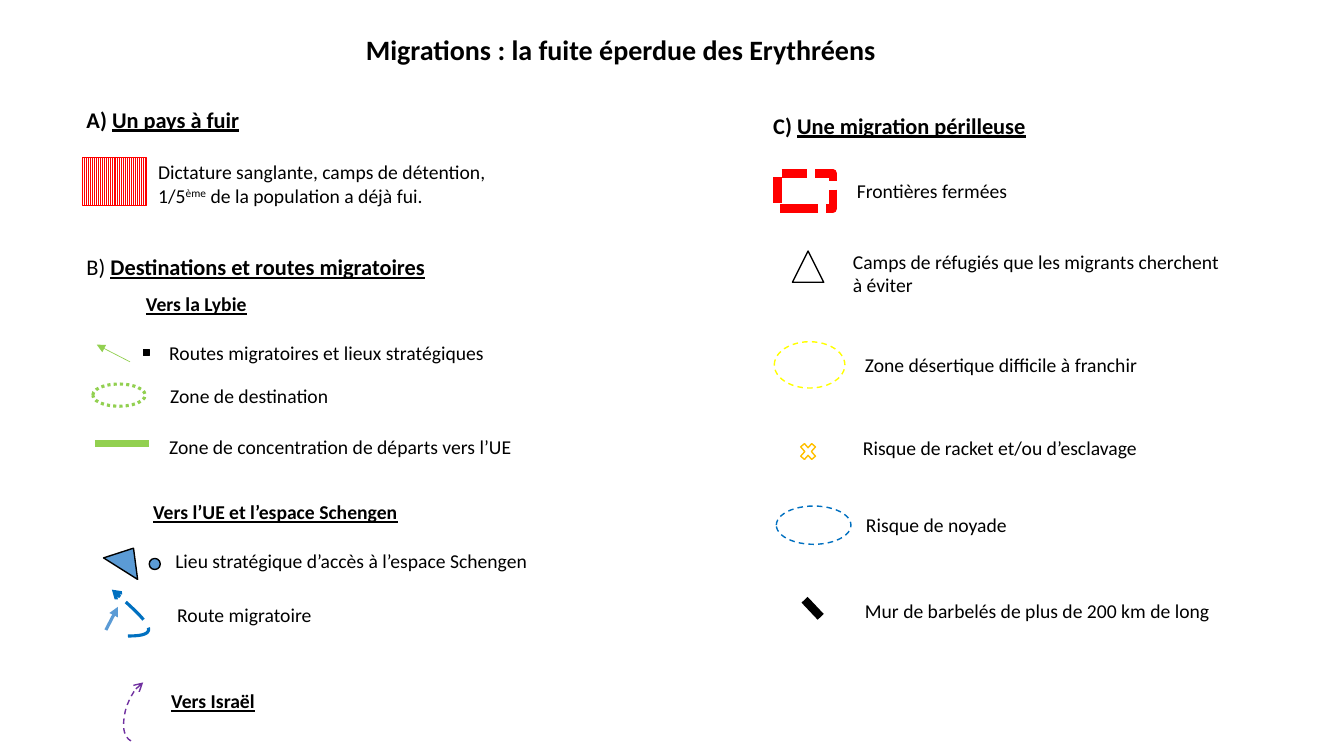
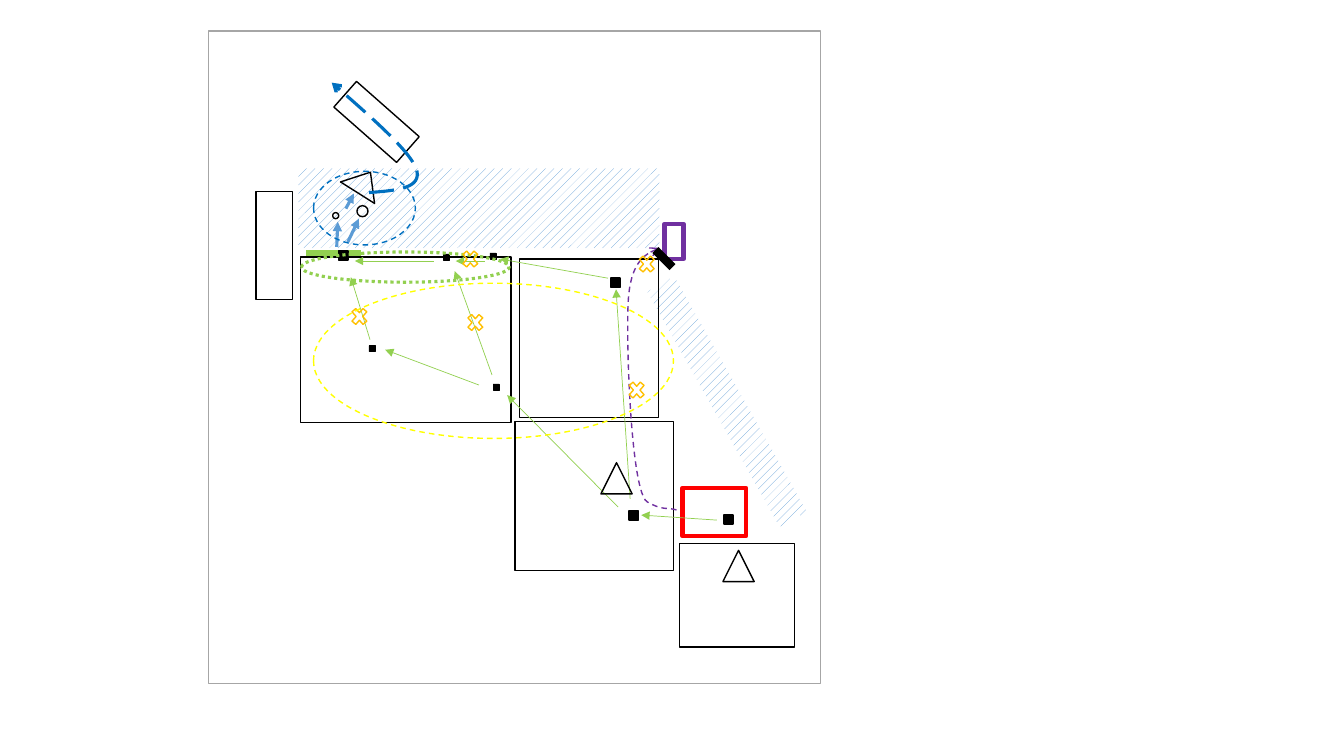
import pptx
import pptx.util
import pptx.dml.color
import pptx.enum.dml
import pptx.enum.shapes
import pptx.oxml.ns
from lxml import etree

RGB = pptx.dml.color.RGBColor
DASH = pptx.enum.dml.MSO_LINE
HATCH = pptx.enum.dml.MSO_PATTERN
FORM = pptx.enum.shapes.MSO_SHAPE
STRAIGHT = pptx.enum.shapes.MSO_CONNECTOR.STRAIGHT
qn = pptx.oxml.ns.qn

BLACK = RGB(0x00, 0x00, 0x00)
WHITE = RGB(0xFF, 0xFF, 0xFF)
GREY = RGB(0xA6, 0xA6, 0xA6)
RED = RGB(0xFF, 0x00, 0x00)
GREEN = RGB(0x92, 0xD0, 0x50)
SKY = RGB(0x5B, 0x9B, 0xD5)
BLUE = RGB(0x00, 0x70, 0xC0)
PURPLE = RGB(0x70, 0x30, 0xA0)
YELLOW = RGB(0xFF, 0xFF, 0x00)
ORANGE = RGB(0xFF, 0xC0, 0x00)

FONT = "Calibri"
PX = 9144
WIDTH, HEIGHT = 1333, 750
STEPS = 24

# form, fill, line colour, line width, dash, usual size
MARKS = {
    "sea": (FORM.RECTANGLE, (HATCH.PERCENT_20, SKY), None, 0, None, ()),
    "regime": (FORM.RECTANGLE, (HATCH.LIGHT_VERTICAL, RED), RED, 0.5, None, (63, 48)),
    "origin": (FORM.RECTANGLE, None, RED, 3, None, (63, 48)),
    "closed": (FORM.RECTANGLE, None, RED, 6, DASH.SQUARE_DOT, ()),
    "country": (FORM.RECTANGLE, None, BLACK, 1, None, ()),
    "israel": (FORM.RECTANGLE, None, PURPLE, 3, None, ()),
    "town": (FORM.RECTANGLE, BLACK, BLACK, 0.5, None, (6, 6)),
    "city": (FORM.RECTANGLE, BLACK, BLACK, 1, None, (9, 9)),
    "target": (FORM.OVAL, None, GREEN, 2.25, DASH.ROUND_DOT, ()),
    "gate": (FORM.ISOSCELES_TRIANGLE, SKY, BLACK, 1, None, ()),
    "port": (FORM.OVAL, SKY, BLACK, 1, None, (11, 11)),
    "island": (FORM.ISOSCELES_TRIANGLE, None, BLACK, 1, None, ()),
    "isle": (FORM.OVAL, None, BLACK, 1, None, (11, 11)),
    "camp": (FORM.ISOSCELES_TRIANGLE, None, BLACK, 1, None, (31, 31)),
    "desert": (FORM.OVAL, None, YELLOW, 1, DASH.DASH, ()),
    "racket": (FORM.MATH_MULTIPLY, None, ORANGE, 1, None, (21, 24)),
    "drown": (FORM.OVAL, None, BLUE, 1, DASH.DASH, ()),
    "frame": (FORM.RECTANGLE, None, GREY, 1, None, ()),
}

LINES = {
    "coast": (GREEN, 4.5, None, None),
    "route": (GREEN, 0.5, None, "triangle"),
    "crossing": (SKY, 2.25, None, "triangle"),
    "europe": (BLUE, 2.25, DASH.LONG_DASH, "arrow"),
    "east": (PURPLE, 1, DASH.DASH, "arrow"),
    "wall": (BLACK, 6, None, None),
}

TEXTS = [
    (353, 27, 560, 20, [[("Migrations : la fuite éperdue des Erythréens", "b")]]),
    (76, 100, 440, 16, [[("A) ", "b"), ("Un pays à fuir", "bu")]]),
    (147, 154, 440, 14, [[("Dictature sanglante, camps de détention,", "")],
                         [("1/5", ""), ("ème", "s"), (" de la population a déjà fui.", "")]]),
    (76, 246, 440, 16, [[("B) ", ""), ("Destinations et routes migratoires", "bu")]]),
    (135, 285, 440, 14, [[("Vers la Lybie", "bu")]]),
    (158, 333, 440, 14, [[("Routes migratoires et lieux stratégiques", "")]]),
    (159, 376, 440, 14, [[("Zone de destination", "")]]),
    (158, 427, 440, 14, [[("Zone de concentration de départs vers l’UE", "")]]),
    (142, 491, 440, 14, [[("Vers l’UE et l’espace Schengen", "bu")]]),
    (164, 540, 440, 14, [[("Lieu stratégique d’accès à l’espace Schengen", "")]]),
    (166, 593, 440, 14, [[("Route migratoire", "")]]),
    (160, 679, 440, 14, [[("Vers Israël", "bu")]]),
    (757, 106, 385, 16, [[("C) ", "b"), ("Une migration périlleuse", "bu")]]),
    (840, 173, 385, 14, [[("Frontières fermées", "")]]),
    (836, 243, 385, 14, [[("Camps de réfugiés que les migrants cherchent à éviter", "")]]),
    (848, 345, 385, 14, [[("Zone désertique difficile à franchir", "")]]),
    (846, 428, 385, 14, [[("Risque de racket et/ou d’esclavage", "")]]),
    (849, 504, 385, 14, [[("Risque de noyade", "")]]),
    (848, 589, 385, 14, [[("Mur de barbelés de plus de 200 km de long", "")]]),
]

LEGEND = {
    "regime": [(82, 156)],
    "route": [[(129, 359), (96, 342)]],
    "town": [(142, 347)],
    "coast": [[(94, 440), (148, 440)]],
    "target": [(92, 381, 52, 22)],
    "gate": [(106, 542, 40, 24, 32.2)],
    "port": [(148, 554)],
    "crossing": [[(105, 625), (117, 602)]],
    "europe": [[(127, 631), (138, 631), (150, 630), (147, 622),
                (144, 614), (128, 600), (111, 585)]],
    "east": [[(130, 735), (121, 730), (122, 717), (124, 707),
              (126, 697), (134, 681), (142, 677)]],
    "closed": [(771, 172, 55, 35)],
    "camp": [(786, 249)],
    "racket": [(791, 436)],
    "drown": [(770, 502, 74, 38)],
    "desert": [(768, 339, 70, 46)],
    "wall": [[(798, 595), (814, 612)]],
}

CHART = {
    "sea": [(296, 167, 358, 79), (587, 383, 268, 31, 60.6)],
    "origin": [(677, 484)],
    "coast": [[(304, 251), (358, 251)]],
    "country": [(511, 418, 157, 148), (254, 190, 36, 107), (298, 255, 209, 164),
                (332, 104, 83, 34, 41.4), (515, 257, 138, 157), (674, 539, 114, 103)],
    "isle": [(354, 204), (330, 211, 6, 6)],
    "city": [(336, 249), (606, 276), (718, 511), (624, 507)],
    "town": [(486, 251), (440, 252), (366, 343), (489, 381)],
    "route": [[(711, 516), (636, 511)], [(367, 337), (348, 275)],
              [(625, 495), (611, 287)], [(481, 259), (452, 259)],
              [(430, 259), (352, 259)], [(613, 503), (503, 392)],
              [(475, 382), (382, 347)], [(603, 276), (496, 257)],
              [(488, 372), (451, 269)]],
    "east": [[(671, 506), (661, 503), (658, 507), (642, 498), (626, 489),
              (621, 343), (623, 301), (625, 259), (640, 252), (654, 246)]],
    "crossing": [[(334, 245), (335, 220)], [(345, 240), (356, 217)],
                 [(343, 207), (351, 192)]],
    "target": [(299, 250, 206, 30)],
    "island": [(341, 169, 40, 24, 32.2)],
    "israel": [(659, 222, 19, 35)],
    "europe": [[(366, 191), (393, 189), (419, 187), (413, 168),
                (407, 150), (368, 116), (329, 82)]],
    "drown": [(311, 170, 101, 73)],
    "racket": [(631, 250), (346, 302), (461, 308), (456, 245), (621, 375)],
    "camp": [(717, 546), (596, 459)],
    "desert": [(311, 281, 357, 154)],
    "wall": [[(650, 248), (667, 265)]],
    "frame": [(207, 31, 607, 647)],
}


def emu(*vals):
    return [round(v * PX) for v in vals]


def stroke(line, color, width, dash):
    if color is None:
        line.fill.background()
        return
    line.color.rgb = color
    line.width = pptx.util.Pt(width)
    if dash is not None:
        line.dash_style = dash


def paint(fill, look):
    if look is None:
        fill.background()
    elif isinstance(look, RGB):
        fill.solid()
        fill.fore_color.rgb = look
    else:
        fill.patterned()
        fill.pattern, fill.fore_color.rgb = look
        fill.back_color.rgb = WHITE


def mark(slide, kind, spot):
    form, look, color, width, dash, size = MARKS[kind]
    box = spot[:4] if len(spot) > 2 else spot + size
    shape = slide.shapes.add_shape(form, *emu(*box))
    shape.shadow.inherit = False
    shape.rotation = spot[4] if len(spot) > 4 else 0
    paint(shape.fill, look)
    stroke(shape.line, color, width, dash)


def bend(pts):
    out = []
    for i in range(0, len(pts) - 1, 3):
        for n in range(1, STEPS + 1):
            t = n / STEPS
            u = 1 - t
            parts = (u ** 3, 3 * u * u * t, 3 * u * t * t, t ** 3)
            out.append(emu(*(sum(k * p[axis] for k, p in zip(parts, pts[i:i + 4]))
                             for axis in (0, 1))))
    return out


def trace(slide, kind, pts):
    color, width, dash, head = LINES[kind]
    if len(pts) == 2:
        item = slide.shapes.add_connector(STRAIGHT, *emu(*pts[0], *pts[1]))
        etree.SubElement(item._element.spPr, qn("a:effectLst"))
    else:
        pen = slide.shapes.build_freeform(*emu(*pts[0]), scale=1)
        pen.add_line_segments(bend(pts), close=False)
        item = pen.convert_to_shape()
        item.shadow.inherit = False
        item.fill.background()
    stroke(item.line, color, width, dash)
    if head:
        etree.SubElement(item.line._get_or_add_ln(), qn("a:tailEnd"), type=head)


def write(slide, x, y, w, size, paras):
    high = 34 if len(paras) == 1 else 57
    frame = slide.shapes.add_textbox(*emu(x, y, w, high)).text_frame
    frame.word_wrap = True
    for i, parts in enumerate(paras):
        para = frame.add_paragraph() if i else frame.paragraphs[0]
        para.font.name = FONT
        para.font.size = pptx.util.Pt(size)
        para.font.color.rgb = BLACK
        for text, style in parts:
            run = para.add_run()
            run.text = text
            font = para.font if len(parts) == 1 else run.font
            if "b" in style:
                font.bold = True
            if "u" in style:
                font.underline = True
            if "s" in style:
                run._r.get_or_add_rPr().set("baseline", "30000")


def draw(deck, items, texts=()):
    slide = deck.slides.add_slide(deck.slide_layouts[6])
    for kind, spots in items.items():
        put = mark if kind in MARKS else trace
        for spot in spots:
            put(slide, kind, spot)
    for text in texts:
        write(slide, *text)


def main():
    deck = pptx.Presentation()
    deck.slide_width, deck.slide_height = emu(WIDTH, HEIGHT)
    draw(deck, LEGEND, TEXTS)
    draw(deck, CHART)
    deck.save("out.pptx")


if __name__ == "__main__":
    main()
